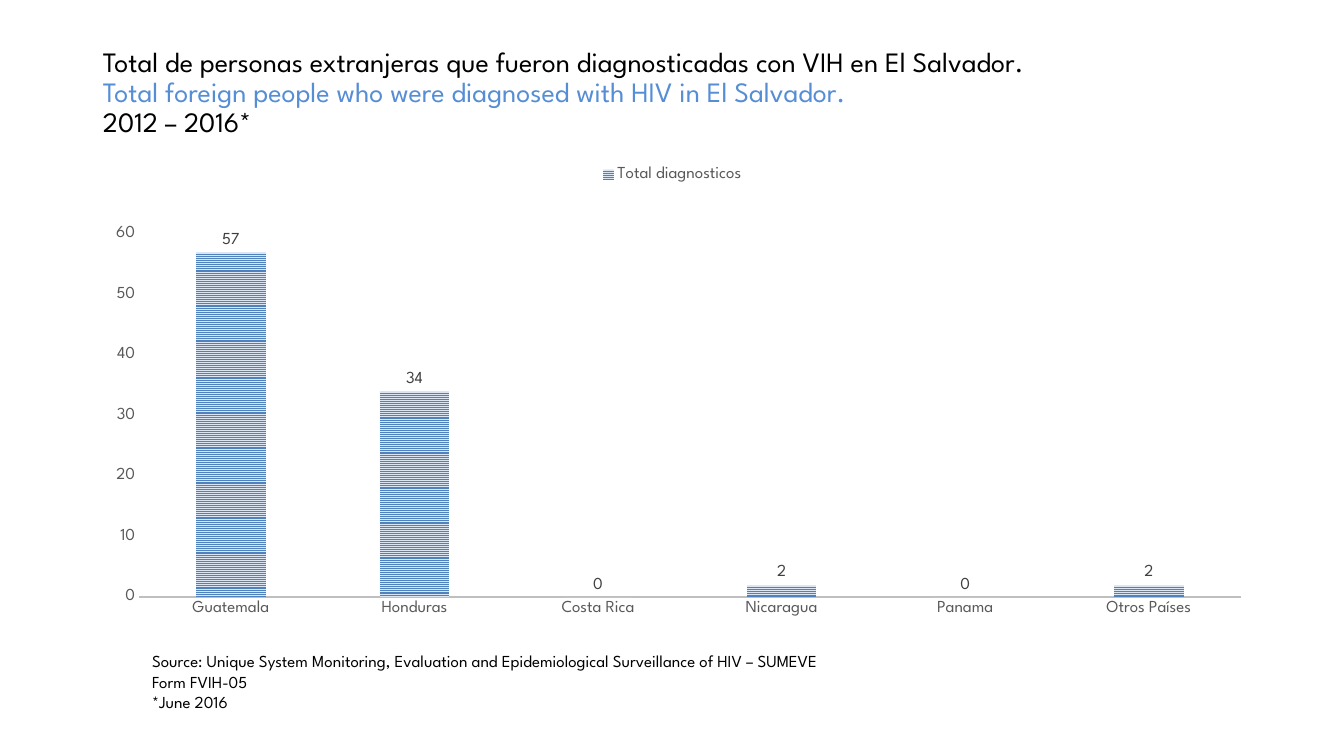
from lxml import etree
from pptx import Presentation
from pptx.chart.data import CategoryChartData
from pptx.dml.color import RGBColor
from pptx.enum.chart import (XL_CHART_TYPE, XL_LABEL_POSITION,
                             XL_LEGEND_POSITION, XL_TICK_MARK)
from pptx.enum.dml import MSO_PATTERN
from pptx.enum.text import MSO_ANCHOR, MSO_AUTO_SIZE, PP_ALIGN
from pptx.oxml.ns import qn
from pptx.util import Inches, Pt

COLUMN = XL_CHART_TYPE.COLUMN_CLUSTERED
OUTSIDE_END = XL_LABEL_POSITION.OUTSIDE_END
LEGEND_TOP = XL_LEGEND_POSITION.TOP
NO_TICK = XL_TICK_MARK.NONE
STRIPES = MSO_PATTERN.NARROW_HORIZONTAL
MIDDLE = MSO_ANCHOR.MIDDLE
LEFT = PP_ALIGN.LEFT
GROW, FIXED = MSO_AUTO_SIZE.SHAPE_TO_FIT_TEXT, MSO_AUTO_SIZE.NONE

BLACK = RGBColor(0x00, 0x00, 0x00)
SKY = RGBColor(0x55, 0x8E, 0xD5)
BLUE = RGBColor(0x4F, 0x81, 0xBD)
PALE = RGBColor(0xDC, 0xE6, 0xF2)
AXIS_GREY = RGBColor(0x59, 0x59, 0x59)
LABEL_GREY = RGBColor(0x40, 0x40, 0x40)
LINE_GREY = RGBColor(0xBF, 0xBF, 0xBF)

FONT = "League Spartan"
PAGE_WIDTH, PAGE_HEIGHT = 13.33, 7.5

# Boxes: left, top, width, height in inches
TITLE_BOX = (0.92, 0, 11.5, 1.85)
CHART_BOX = (0.92, 1.54, 11.5, 5.22)
SOURCE_BOX = (1.41, 6.41, 8, 0.71)
# Plot area as shares of the chart
PLOT_SHARES = {"x": 0.04, "y": 0.15, "w": 0.95, "h": 0.69}

TITLE_LINES = [
    ("Total de personas extranjeras que fueron diagnosticadas con VIH en El Salvador.", BLACK),
    ("Total foreign people who were diagnosed with HIV in El Salvador.", SKY),
    ("2012 – 2016*", BLACK),
]
DIAGNOSES = {"Guatemala": 57, "Honduras": 34, "Costa Rica": 0,
             "Nicaragua": 2, "Panama": 0, "Otros Países": 2}
SOURCE_LINES = [
    "Source: Unique System Monitoring, Evaluation and Epidemiological "
    "Surveillance of HIV – SUMEVE",
    "Form FVIH-05",
    "*June 2016",
]


def set_values(target, values):
    for name, value in values.items():
        setattr(target, name, value)


def set_font(font, size, color):
    set_values(font, {"name": FONT, "size": Pt(size), "bold": False})
    font.color.rgb = color


def place(shape, box):
    names = ("left", "top", "width", "height")
    set_values(shape, dict(zip(names, map(Inches, box))))


def add_title(page, box):
    title = page.shapes.title
    place(title, box)
    frame = title.text_frame
    set_values(frame, {"vertical_anchor": MIDDLE, "auto_size": FIXED, "word_wrap": True})
    para = frame.paragraphs[0]
    set_values(para, {"alignment": LEFT, "line_spacing": 0.9})
    for index, (text, color) in enumerate(TITLE_LINES):
        if index:
            para.add_line_break()
        span = para.add_run()
        span.text = text
        set_font(span.font, 20, color)


def set_plot_layout(chart, shares):
    plot_area = chart._chartSpace.find(".//" + qn("c:plotArea"))
    for old_layout in plot_area.findall(qn("c:layout")):
        plot_area.remove(old_layout)
    layout = etree.Element(qn("c:layout"))
    manual = etree.SubElement(layout, qn("c:manualLayout"))
    settings = {"layoutTarget": "inner", "xMode": "edge", "yMode": "edge", **shares}
    for name, value in settings.items():
        etree.SubElement(manual, qn("c:" + name)).set("val", str(value))
    plot_area.insert(0, layout)


def add_diagnoses_chart(page, box):
    data = CategoryChartData()
    data.categories = list(DIAGNOSES)
    data.add_series("Total diagnosticos", list(DIAGNOSES.values()))
    chart = page.shapes.add_chart(COLUMN, *map(Inches, box), data).chart
    set_font(chart.font, 10, BLACK)
    set_values(chart, {"has_title": False, "has_legend": True})
    set_values(chart.legend, {"position": LEGEND_TOP, "include_in_layout": False})
    set_font(chart.legend.font, 12, AXIS_GREY)
    set_plot_layout(chart, PLOT_SHARES)

    # Axes
    for axis in (chart.category_axis, chart.value_axis):
        set_values(axis, {"has_major_gridlines": False,
                          "major_tick_mark": NO_TICK, "minor_tick_mark": NO_TICK})
        set_font(axis.tick_labels.font, 12, AXIS_GREY)
    set_values(chart.value_axis, {"minimum_scale": 0, "maximum_scale": 60, "major_unit": 10})
    chart.value_axis.format.line.fill.background()
    base_line = chart.category_axis.format.line
    base_line.color.rgb = LINE_GREY
    base_line.width = Pt(1.5)

    # Striped columns with their values
    plot = chart.plots[0]
    set_values(plot, {"gap_width": 164, "overlap": -22,
                      "vary_by_categories": False, "has_data_labels": True})
    set_values(plot.data_labels, {"show_value": True, "position": OUTSIDE_END})
    set_font(plot.data_labels.font, 12, LABEL_GREY)
    fill = plot.series[0].format.fill
    fill.patterned()
    fill.pattern = STRIPES
    fill.fore_color.rgb = BLUE
    fill.back_color.rgb = PALE


def add_source(page, box):
    frame = page.shapes.add_textbox(*map(Inches, box)).text_frame
    set_values(frame, {"word_wrap": False, "auto_size": GROW})
    frame.text = "\n".join(SOURCE_LINES)
    for para in frame.paragraphs:
        set_font(para.runs[0].font, 12, BLACK)


def main():
    deck = Presentation()
    set_values(deck, {"slide_width": Inches(PAGE_WIDTH), "slide_height": Inches(PAGE_HEIGHT)})
    page = deck.slides.add_slide(deck.slide_layouts[5])
    add_title(page, TITLE_BOX)
    add_diagnoses_chart(page, CHART_BOX)
    add_source(page, SOURCE_BOX)
    deck.save("out.pptx")


if __name__ == "__main__":
    main()
